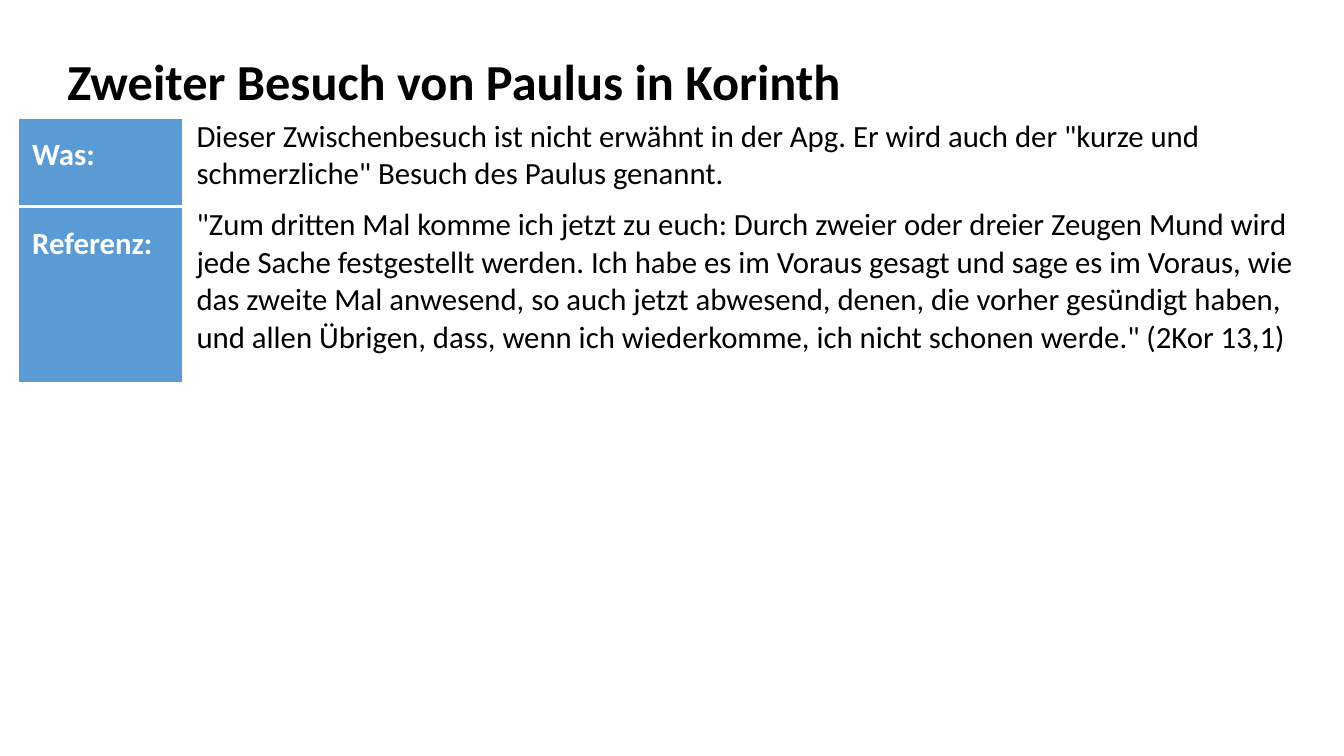
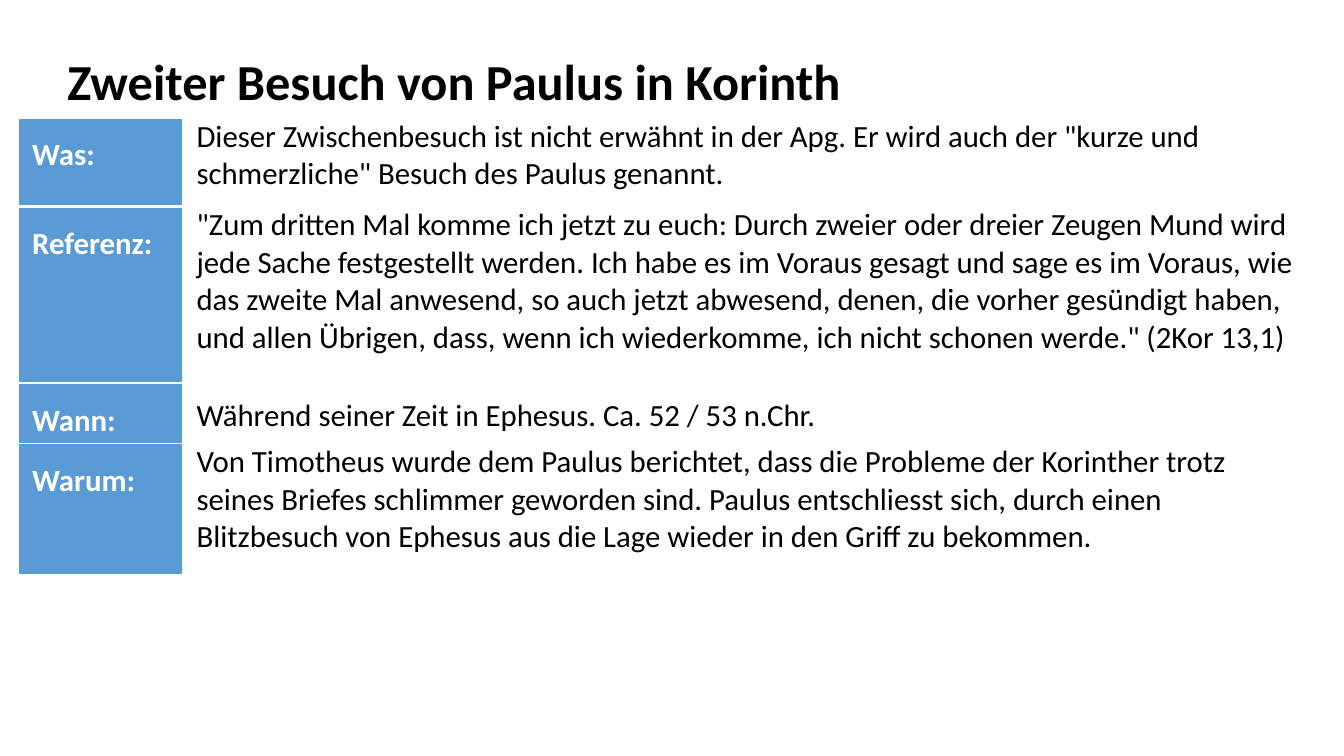
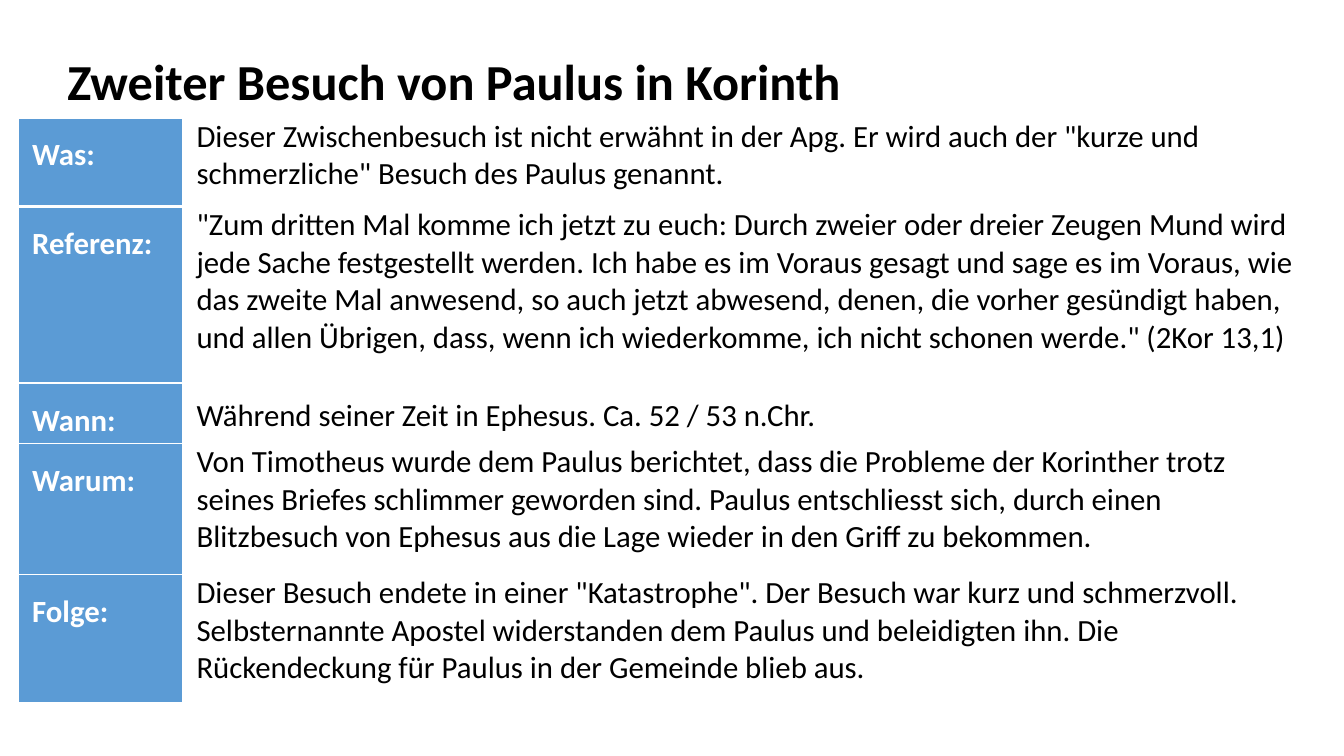
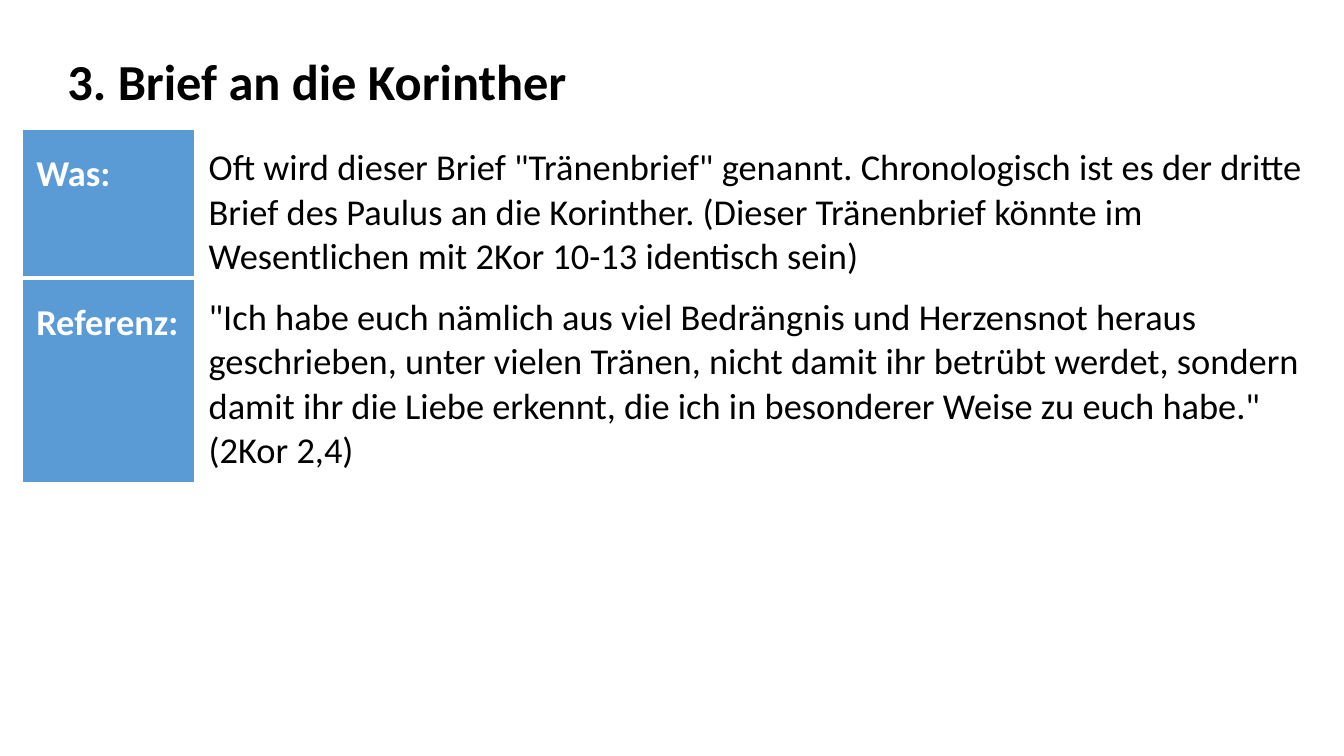
from pptx import Presentation
from pptx.dml.color import RGBColor
from pptx.enum.text import MSO_AUTO_SIZE
from pptx.oxml.xmlchemy import OxmlElement
from pptx.util import Pt

PX = 9144  # EMU per px, 100 px to the inch
FONT = "Calibri"
BLACK = RGBColor(0x00, 0x00, 0x00)
WHITE = RGBColor(0xFF, 0xFF, 0xFF)
BLUE = RGBColor(0x5B, 0x9B, 0xD5)
CELL_INSET = 14
TITLE_SIZE = 36

# Table rows: label, text, row height, space above the text
VISIT_ROWS = [
    ("Was:",
     'Dieser Zwischenbesuch ist nicht erwähnt in der Apg. Er wird auch der "kurze und '
     'schmerzliche" Besuch des Paulus genannt.', 88, 0),
    ("Referenz:",
     '"Zum dritten Mal komme ich jetzt zu euch: Durch zweier oder dreier Zeugen Mund wird '
     'jede Sache festgestellt werden. Ich habe es im Voraus gesagt und sage es im Voraus, wie '
     'das zweite Mal anwesend, so auch jetzt abwesend, denen, die vorher gesündigt haben, '
     'und allen Übrigen, dass, wenn ich wiederkomme, ich nicht schonen werde." (2Kor 13,1)',
     175, 0),
    ("Wann:", "Während seiner Zeit in Ephesus. Ca. 52 / 53 n.Chr.", 60, 14),
    ("Warum:",
     "Von Timotheus wurde dem Paulus berichtet, dass die Probleme der Korinther trotz "
     "seines Briefes schlimmer geworden sind. Paulus entschliesst sich, durch einen "
     "Blitzbesuch von Ephesus aus die Lage wieder in den Griff zu bekommen.", 130, 0),
    ("Folge:",
     'Dieser Besuch endete in einer "Katastrophe". Der Besuch war kurz und schmerzvoll. '
     "Selbsternannte Apostel widerstanden dem Paulus und beleidigten ihn. Die "
     "Rückendeckung für Paulus in der Gemeinde blieb aus.", 127, 0),
]
LETTER_ROWS = [
    ("Was:",
     'Oft wird dieser Brief "Tränenbrief" genannt. Chronologisch ist es der dritte '
     "Brief des Paulus an die Korinther. (Dieser Tränenbrief könnte im "
     "Wesentlichen mit 2Kor 10-13 identisch sein)", 148, 17),
    ("Referenz:",
     '"Ich habe euch nämlich aus viel Bedrängnis und Herzensnot heraus '
     "geschrieben, unter vielen Tränen, nicht damit ihr betrübt werdet, sondern "
     'damit ihr die Liebe erkennt, die ich in besonderer Weise zu euch habe." '
     "(2Kor 2,4)", 203, 17),
]

# Slides: title, title width, table left and top, column widths, text size, rows
VISIT_TITLE = "Zweiter Besuch von Paulus in Korinth"
VISIT_LAYOUT = (VISIT_TITLE, 796, (18, 117), (163, 1125), 22)
SLIDES = [(*VISIT_LAYOUT, VISIT_ROWS[:count]) for count in (2, 4, 5)]
SLIDES.append(("3. Brief an die Korinther", 521, (22, 128), (171, 1118), 26, LETTER_ROWS))


def add_run(paragraph, text, size, color, bold):
    run = paragraph.add_run()
    run.text = text
    font = run.font
    font.name, font.size, font.bold = FONT, Pt(size), bold
    font.color.rgb = color


def add_title(slide, text, width):
    box = slide.shapes.add_textbox(57 * PX, 45 * PX, width * PX, 71 * PX)
    frame = box.text_frame
    frame.word_wrap = False
    frame.auto_size = MSO_AUTO_SIZE.SHAPE_TO_FIT_TEXT
    add_run(frame.paragraphs[0], text, TITLE_SIZE, BLACK, True)


def set_borders(cell, bottom_width):
    properties = cell._tc.get_or_add_tcPr()
    for side, width in (("L", 1), ("R", 1), ("T", 1), ("B", bottom_width)):
        line = OxmlElement(f"a:ln{side}")
        line.set("w", str(Pt(width)))
        fill = OxmlElement("a:solidFill")
        color = OxmlElement("a:srgbClr")
        color.set("val", str(WHITE))
        fill.append(color)
        line.append(fill)
        properties.append(line)


def fill_cell(cell, text, size, color, background, is_label, space_above, bottom_width):
    cell.margin_left = cell.margin_right = CELL_INSET * PX
    cell.margin_top, cell.margin_bottom = space_above * PX, 0
    set_borders(cell, bottom_width)
    cell.fill.solid()
    cell.fill.fore_color.rgb = background
    paragraph = cell.text_frame.paragraphs[0]
    if is_label:
        paragraph.line_spacing = 1.5
    add_run(paragraph, text, size, color, is_label)


def add_fact_table(slide, position, column_widths, size, rows):
    left, top = position
    height = sum(row[2] for row in rows)
    table = slide.shapes.add_table(len(rows), 2, left * PX, top * PX,
                                   sum(column_widths) * PX, height * PX).table
    table.first_row = table.horz_banding = False
    for column, width in zip(table.columns, column_widths):
        column.width = width * PX
    for index, (label, text, row_height, space_above) in enumerate(rows):
        table.rows[index].height = row_height * PX
        bottom_width = 3 if index == 0 else 1
        fill_cell(table.cell(index, 0), label, size, WHITE, BLUE, True, 0, bottom_width)
        fill_cell(table.cell(index, 1), text, size, BLACK, WHITE, False, space_above,
                  bottom_width)


def main():
    presentation = Presentation()
    presentation.slide_width, presentation.slide_height = 1333 * PX, 750 * PX
    for title, title_width, position, column_widths, size, rows in SLIDES:
        slide = presentation.slides.add_slide(presentation.slide_layouts[6])
        add_title(slide, title, title_width)
        add_fact_table(slide, position, column_widths, size, rows)
    presentation.save("out.pptx")


if __name__ == "__main__":
    main()
